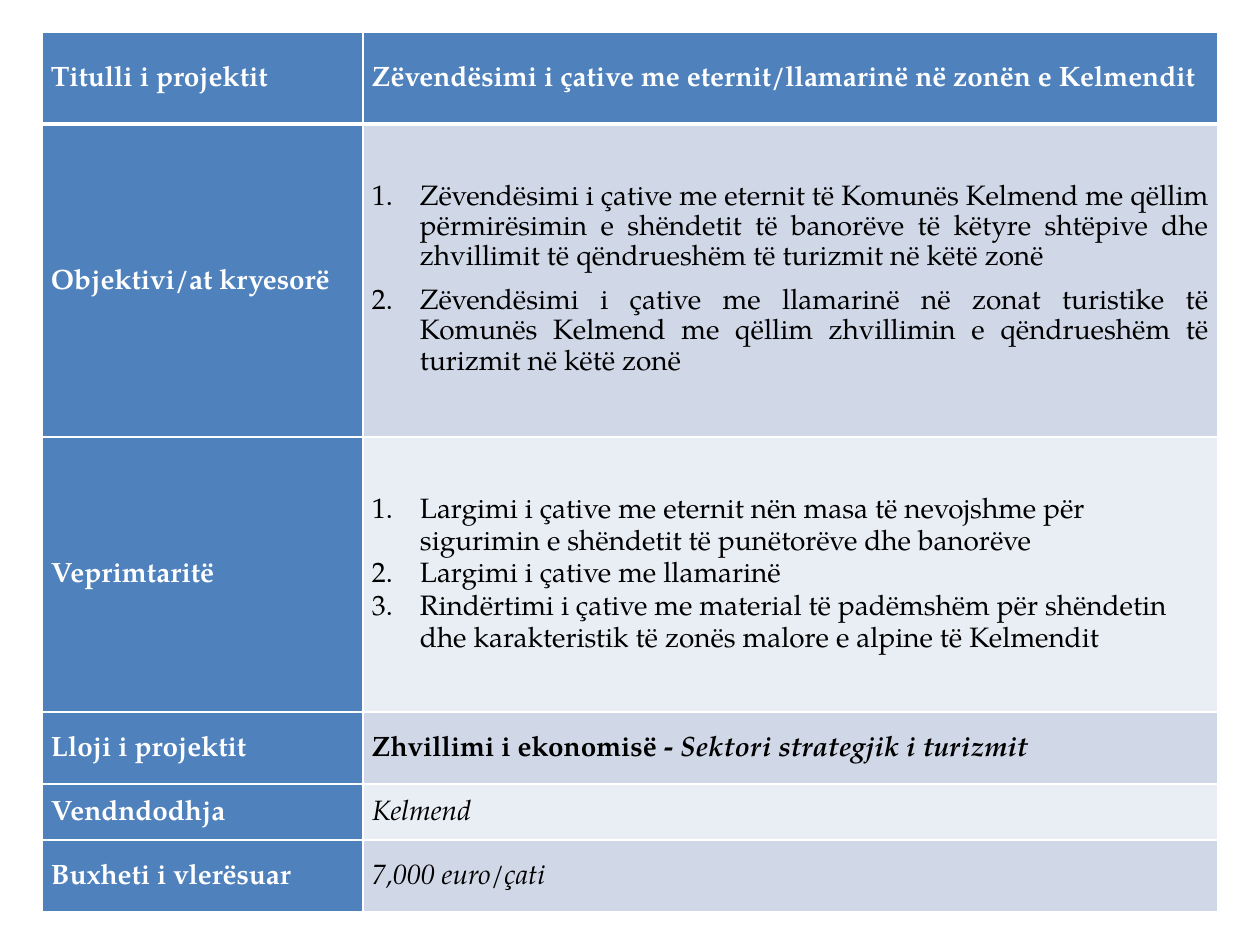
import pptx
import pptx.dml.color
import pptx.enum.text
import pptx.oxml
import pptx.oxml.ns
import pptx.util

RGB = pptx.dml.color.RGBColor
ALIGN = pptx.enum.text.PP_ALIGN
MIDDLE = pptx.enum.text.MSO_ANCHOR.MIDDLE
BLUE = RGB(0x4F, 0x81, 0xBD)
DARK = RGB(0xD0, 0xD8, 0xE8)
LIGHT = RGB(0xE9, 0xED, 0xF4)
WHITE = RGB(0xFF, 0xFF, 0xFF)
BLACK = RGB(0, 0, 0)
FONT = "TeX Gyre Pagella"
PX = 914400 // 126  # EMU in one px
INDENT = 48 * PX


def frame(cell, bottom):
    """Give the cell white borders; bottom is the lower width in points."""
    props = cell._tc.get_or_add_tcPr()
    for side, width in (("L", 1), ("R", 1), ("T", 1), ("B", bottom)):
        props.append(pptx.oxml.parse_xml(
            f'<a:ln{side} {pptx.oxml.ns.nsdecls("a")} w="{width * 12700}">'
            f'<a:solidFill><a:srgbClr val="{WHITE}"/></a:solidFill></a:ln{side}>'))


def write(cell, text, fill, color, bold, italic):
    """Fill the cell and set its text in the table's style."""
    cell.fill.solid()
    cell.fill.fore_color.rgb = fill
    cell.vertical_anchor = MIDDLE
    cell.margin_left = cell.margin_right = 9 * PX
    cell.margin_top = cell.margin_bottom = 0
    cell.text_frame.text = text
    for para in cell.text_frame.paragraphs:
        para.line_spacing = 1.15
        for run in para.runs:
            font = run.font
            font.name, font.size = FONT, pptx.util.Pt(16)
            font.bold, font.italic = bold, italic
            font.color.rgb = color


deck = pptx.Presentation()
deck.slide_width, deck.slide_height = 1260 * PX, 945 * PX
slide = deck.slides.add_slide(deck.slide_layouts[6])

# Wording: label, content, bold, italic
goals = "\n".join((
    "Zëvendësimi i çative me eternit të Komunës Kelmend me qëllim përmirësimin e "
    "shëndetit të banorëve të këtyre shtëpive dhe zhvillimit të qëndrueshëm të "
    "turizmit në këtë zonë",
    "Zëvendësimi i çative me llamarinë në zonat turistike të Komunës Kelmend me "
    "qëllim zhvillimin e qëndrueshëm të turizmit në këtë zonë"))
tasks = "\n".join((
    "Largimi i çative me eternit nën masa të nevojshme për sigurimin e shëndetit "
    "të punëtorëve dhe banorëve",
    "Largimi i çative me llamarinë",
    "Rindërtimi i çative me material të padëmshëm për shëndetin dhe karakteristik "
    "të zonës malore e alpine të Kelmendit"))
rows = (
    ("Titulli i projektit",
     "Zëvendësimi i çative me eternit/llamarinë në zonën e Kelmendit", True, False),
    ("Objektivi/at kryesorë", goals, False, False),
    ("Veprimtaritë", tasks, False, False),
    ("Lloji i projektit", "Zhvillimi i ekonomisë -", True, False),
    ("Vendndodhja", "Kelmend", False, True),
    ("Buxheti i vlerësuar", "7,000 euro/çati", False, True),
)
widths = (321, 855)
heights = (92, 313, 275, 72, 56, 72)

# Table grid
table = slide.shapes.add_table(len(rows), 2, 42 * PX, 32 * PX,
                               sum(widths) * PX, sum(heights) * PX).table
for col, width in zip(table.columns, widths):
    col.width = width * PX
for row, height in zip(table.rows, heights):
    row.height = height * PX

# Cells: blue head row and label column, banded content
for num, (label, text, bold, italic) in enumerate(rows):
    head, body = table.cell(num, 0), table.cell(num, 1)
    for cell in (head, body):
        frame(cell, 1 if num else 3)
    write(head, label, BLUE, WHITE, True, False)
    if num == 0:
        write(body, text, BLUE, WHITE, bold, italic)
    else:
        write(body, text, DARK if num % 2 else LIGHT, BLACK, bold, italic)

# Numbered lists
for num in (1, 2):
    for para in table.cell(num, 1).text_frame.paragraphs:
        props = para._p.get_or_add_pPr()
        props.set("marL", str(INDENT))
        props.set("indent", str(-INDENT))
        if num == 1:
            para.alignment = ALIGN.JUSTIFY
            para.line_spacing = 1.07
            para.space_after = pptx.util.Pt(8)
        props.append(pptx.oxml.parse_xml(
            f'<a:buAutoNum {pptx.oxml.ns.nsdecls("a")} type="arabicPeriod"/>'))

# Italic ending of the project type
run = table.cell(3, 1).text_frame.paragraphs[0].add_run()
run.text = " Sektori strategjik i turizmit"
run.font.name, run.font.size = FONT, pptx.util.Pt(16)
run.font.bold = run.font.italic = True
run.font.color.rgb = BLACK

deck.save("out.pptx")
